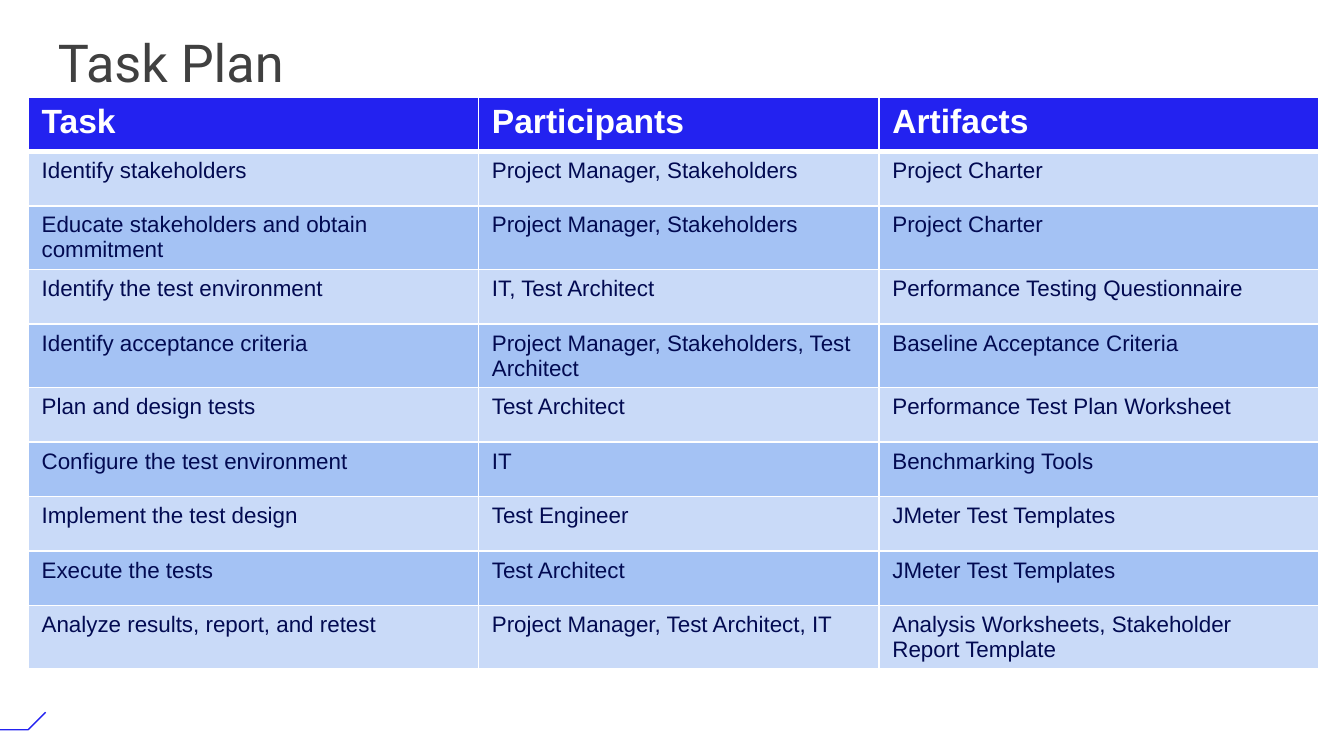
from dataclasses import dataclass

from lxml import etree
from pptx import Presentation
from pptx import util as u
from pptx.dml.color import RGBColor
from pptx.enum import text
from pptx.oxml.ns import qn


@dataclass(frozen=True)
class Theme:
    accent: str = "2322F0"
    title: str = "404040"
    body: str = "020A51"
    white: str = "FFFFFF"
    bands: tuple = ("C9DAF8", "A4C2F4")
    title_font: str = "Roboto"
    body_font: str = "Arial"
    title_size: int = 28
    header_size: int = 18
    body_size: int = 12


THEME = Theme()
TITLE = "Task Plan"
HEADERS = ("Task", "Participants", "Artifacts")
TASKS = [
    ("Identify stakeholders", "Project Manager, Stakeholders", "Project Charter"),
    ("Educate stakeholders and obtain commitment", "Project Manager, Stakeholders", "Project Charter"),
    ("Identify the test environment", "IT, Test Architect", "Performance Testing Questionnaire"),
    ("Identify acceptance criteria", "Project Manager, Stakeholders, Test Architect",
     "Baseline Acceptance Criteria"),
    ("Plan and design tests", "Test Architect", "Performance Test Plan Worksheet"),
    ("Configure the test environment", "IT", "Benchmarking Tools"),
    ("Implement the test design", "Test Engineer", "JMeter Test Templates"),
    ("Execute the tests", "Test Architect", "JMeter Test Templates"),
    ("Analyze results, report, and retest", "Project Manager, Test Architect, IT",
     "Analysis Worksheets, Stakeholder Report Template"),
]
WIDTH = 10
HEIGHT = WIDTH * 9 / 16
TITLE_BOX = (0.33, 0.23, 9.34, 0.52)
TABLE_LEFT, TABLE_TOP = 0.21, 0.72
COLUMNS = (3.35, 2.98, 3.27)
ROW_HEIGHT = u.Cm(1.03)
CORNER_LINE = [(0, 5.43), (0.21, 5.43), (0.34, 5.3)]


def inches(values):
    return [u.Inches(value) for value in values]


def style(paragraph, font, size, color, bold=False):
    paragraph.alignment = text.PP_ALIGN.LEFT
    for span in paragraph.runs:
        span.font.name = font
        span.font.size = u.Pt(size)
        span.font.bold = bold
        span.font.color.rgb = RGBColor.from_string(color)


def add_borders(cell, top, bottom):
    properties = cell._tc.get_or_add_tcPr()
    for index, (side, points) in enumerate((("L", 1), ("R", 1), ("T", top), ("B", bottom))):
        border = etree.Element(qn(f"a:ln{side}"), w=str(u.Pt(points)))
        fill = etree.SubElement(border, qn("a:solidFill"))
        etree.SubElement(fill, qn("a:srgbClr"), val=THEME.white)
        properties.insert(index, border)


def add_corner_line(page):
    start, *rest = [inches(point) for point in CORNER_LINE]
    builder = page.shapes.build_freeform(*start)
    builder.add_line_segments(rest, close=False)
    corner = builder.convert_to_shape()
    corner.shadow.inherit = False
    corner.fill.background()
    corner.line.color.rgb = RGBColor.from_string(THEME.accent)
    corner.line.width = u.Pt(0.75)


def add_title(page):
    title = page.shapes.title
    title.left, title.top, title.width, title.height = inches(TITLE_BOX)
    frame = title.text_frame
    frame.text = TITLE
    frame.word_wrap = True
    frame.auto_size = text.MSO_AUTO_SIZE.NONE
    frame.vertical_anchor = text.MSO_ANCHOR.MIDDLE
    frame.paragraphs[0].line_spacing = 0.9
    style(frame.paragraphs[0], THEME.title_font, THEME.title_size, THEME.title)


def add_task_table(page):
    rows = [HEADERS, *TASKS]
    place = inches((TABLE_LEFT, TABLE_TOP, sum(COLUMNS)))
    table = page.shapes.add_table(len(rows), len(COLUMNS), *place, ROW_HEIGHT * len(rows)).table
    for column, width in zip(table.columns, COLUMNS):
        column.width = u.Inches(width)
    for row_index, values in enumerate(rows):
        table.rows[row_index].height = ROW_HEIGHT
        header = row_index == 0
        fill = THEME.accent if header else THEME.bands[(row_index - 1) % 2]
        size = THEME.header_size if header else THEME.body_size
        color = THEME.white if header else THEME.body
        for column_index, value in enumerate(values):
            cell = table.cell(row_index, column_index)
            cell.text_frame.text = value
            cell.fill.solid()
            cell.fill.fore_color.rgb = RGBColor.from_string(fill)
            style(cell.text_frame.paragraphs[0], THEME.body_font, size, color, header)
            add_borders(cell, top=3 if row_index == 1 else 1, bottom=3 if header else 1)


def main():
    deck = Presentation()
    deck.slide_width, deck.slide_height = inches((WIDTH, HEIGHT))
    page = deck.slides.add_slide(deck.slide_layouts[5])
    add_corner_line(page)
    add_title(page)
    add_task_table(page)
    deck.save("out.pptx")


if __name__ == "__main__":
    main()
